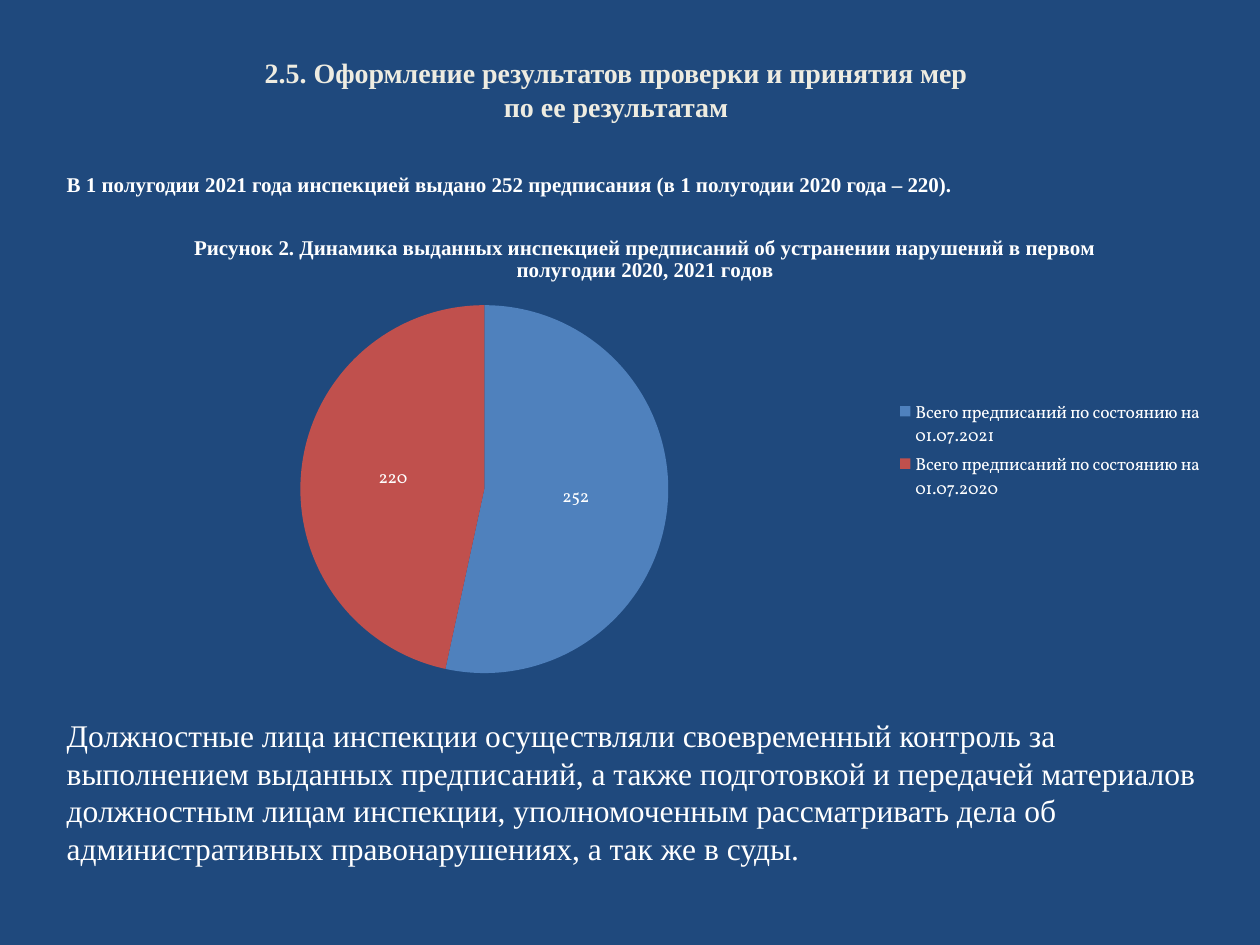
from dataclasses import dataclass

from pptx import Presentation
from pptx.chart.data import CategoryChartData
from pptx.dml.color import RGBColor
from pptx.enum.chart import XL_CHART_TYPE, XL_LABEL_POSITION, XL_LEGEND_POSITION
from pptx.enum.text import MSO_ANCHOR, MSO_AUTO_SIZE, PP_ALIGN
from pptx.oxml.xmlchemy import OxmlElement
from pptx.util import Cm, Pt

NAVY = RGBColor(0x1F, 0x49, 0x7D)
CREAM = RGBColor(0xEE, 0xEC, 0xE1)
WHITE = RGBColor(0xFF, 0xFF, 0xFF)
BLUE = RGBColor(0x4F, 0x81, 0xBD)
RED = RGBColor(0xC0, 0x50, 0x4D)
TEXT_FONT = "Times New Roman"
CHART_FONT = "Vollkorn"


@dataclass(frozen=True)
class Frame:
    left: float
    top: float
    width: float
    height: float

    def lengths(self) -> tuple:
        return Cm(self.left), Cm(self.top), Cm(self.width), Cm(self.height)


@dataclass(frozen=True)
class Slice:
    label: str
    value: int
    color: RGBColor


TITLE_FRAME = Frame(0.89, 0.05, 23.06, 2.44)
BODY_FRAME = Frame(1.09, 3.33, 24, 14.35)
CHART_FRAME = Frame(1.5, 4.32, 23.01, 9.6)

SLICES = [
    Slice("Всего предписаний по состоянию на 01.07.2021", 252, BLUE),
    Slice("Всего предписаний по состоянию на 01.07.2020", 220, RED),
]


def style_font(font, size: float, color: RGBColor, name: str, bold: bool = False) -> None:
    font.size = Pt(size)
    font.color.rgb = color
    font.name = name
    font.bold = bold


def write_text(paragraph, text: str, *, size: float, color: RGBColor = WHITE,
               bold: bool = False, align=PP_ALIGN.LEFT, before: float = 0,
               line_height: float | None = None) -> None:
    paragraph.text = text
    paragraph.alignment = align
    paragraph.space_before = Pt(before)
    paragraph.space_after = Pt(0)
    if line_height:
        paragraph.line_spacing = Pt(line_height)
    for run in paragraph.runs:
        style_font(run.font, size, color, TEXT_FONT, bold)


def remove_bullet(paragraph) -> None:
    properties = paragraph._p.get_or_add_pPr()
    properties.set("marL", "0")
    properties.set("indent", "0")
    properties.append(OxmlElement("a:buNone"))


def place(shape, frame: Frame) -> None:
    shape.left, shape.top, shape.width, shape.height = frame.lengths()


def fill_title(shape) -> None:
    place(shape, TITLE_FRAME)
    text_frame = shape.text_frame
    text_frame.auto_size = MSO_AUTO_SIZE.NONE
    text_frame.vertical_anchor = MSO_ANCHOR.BOTTOM
    text_frame.margin_left = text_frame.margin_right = text_frame.margin_bottom = 0
    write_text(text_frame.paragraphs[0],
               "2.5. Оформление результатов проверки и принятия мер\vпо ее результатам",
               size=16, color=CREAM, bold=True, align=PP_ALIGN.CENTER, line_height=19.4)


def fill_body(shape) -> None:
    place(shape, BODY_FRAME)
    text_frame = shape.text_frame
    text_frame.auto_size = MSO_AUTO_SIZE.NONE
    text_frame.vertical_anchor = MSO_ANCHOR.TOP
    write_text(text_frame.paragraphs[0],
               "В 1 полугодии 2021 года инспекцией выдано 252 предписания "
               "(в 1 полугодии 2020 года – 220).",
               size=12, bold=True, line_height=14.4)
    write_text(text_frame.add_paragraph(),
               "Должностные лица инспекции осуществляли своевременный контроль "
               "за выполнением выданных предписаний, а также подготовкой и передачей "
               "материалов должностным лицам инспекции, уполномоченным рассматривать "
               "дела об административных правонарушениях, а так же в суды.",
               size=18, before=297, line_height=21.5)
    for paragraph in text_frame.paragraphs:
        remove_bullet(paragraph)


def add_pie(slide, slices: list[Slice]) -> None:
    chart_data = CategoryChartData()
    chart_data.categories = [item.label for item in slices]
    chart_data.add_series("Series 1", [item.value for item in slices])
    chart = slide.shapes.add_chart(XL_CHART_TYPE.PIE, *CHART_FRAME.lengths(), chart_data).chart
    style_font(chart.font, 10, WHITE, CHART_FONT)

    chart.has_title = True
    write_text(chart.chart_title.text_frame.paragraphs[0],
               "Рисунок 2. Динамика выданных инспекцией предписаний об устранении "
               "нарушений в первом полугодии 2020, 2021 годов",
               size=12, bold=True, align=PP_ALIGN.CENTER)
    chart.chart_title.include_in_layout = False

    chart.has_legend = True
    chart.legend.position = XL_LEGEND_POSITION.RIGHT
    chart.legend.include_in_layout = False

    plot = chart.plots[0]
    plot.vary_by_categories = True
    plot.has_data_labels = True
    labels = plot.data_labels
    labels.show_value = True
    labels.show_percentage = False
    labels.position = XL_LABEL_POSITION.CENTER
    style_font(labels.font, 10, WHITE, CHART_FONT)

    for index, item in enumerate(slices):
        fill = plot.series[0].points[index].format.fill
        fill.solid()
        fill.fore_color.rgb = item.color


def main() -> None:
    presentation = Presentation()
    presentation.slide_width = Cm(25.4)
    presentation.slide_height = Cm(19.05)
    slide = presentation.slides.add_slide(presentation.slide_layouts[1])
    background = slide.background.fill
    background.solid()
    background.fore_color.rgb = NAVY
    fill_title(slide.shapes.title)
    fill_body(slide.placeholders[1])
    add_pie(slide, SLICES)
    presentation.save("out.pptx")


if __name__ == "__main__":
    main()
